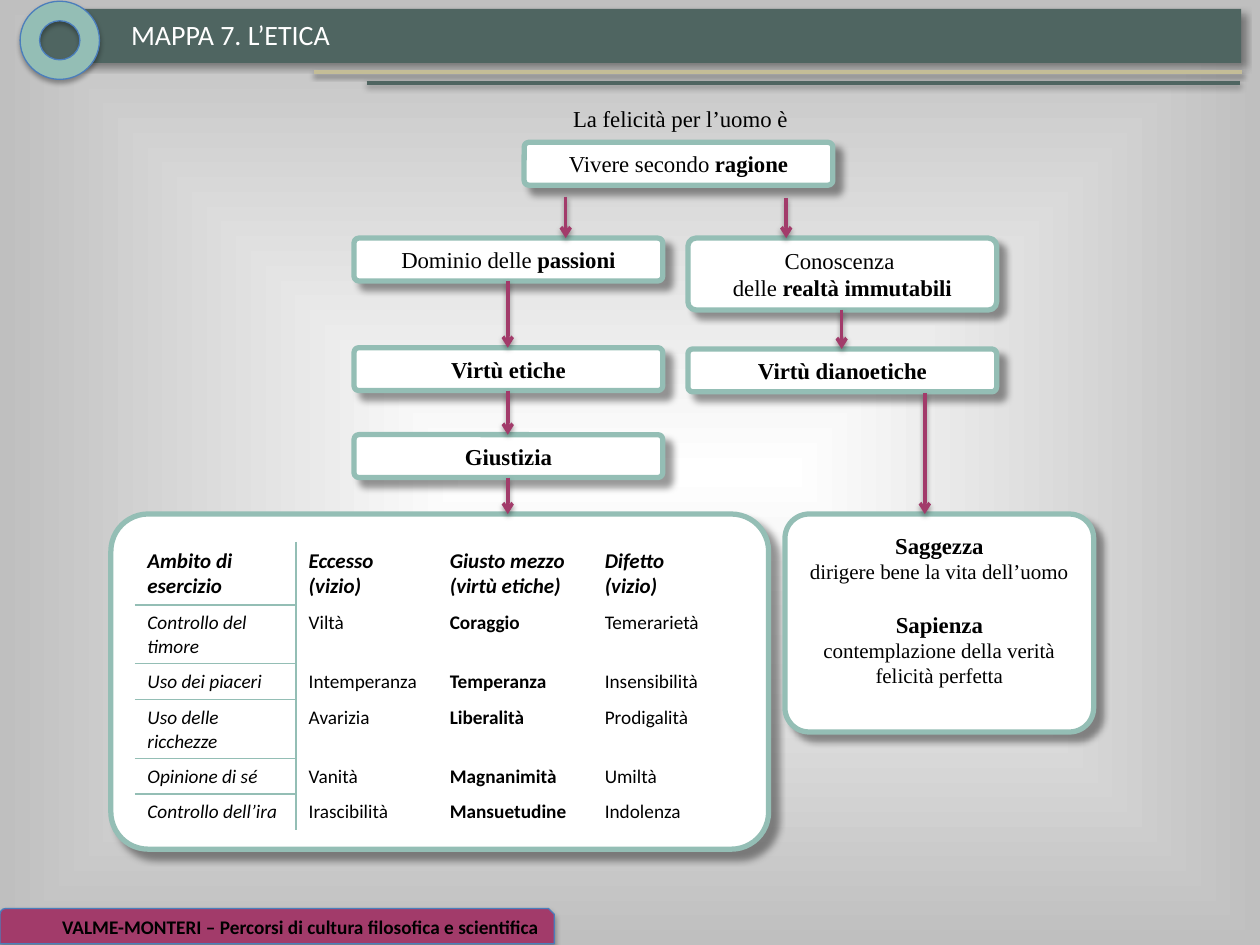
from dataclasses import dataclass

from pptx import Presentation
from pptx.dml.color import RGBColor
from pptx.enum.shapes import MSO_CONNECTOR, MSO_SHAPE
from pptx.enum.text import MSO_ANCHOR, MSO_AUTO_SIZE, PP_ALIGN
from pptx.oxml import parse_xml
from pptx.oxml.ns import nsdecls
from pptx.util import Inches, Pt

LEFT, MID, RIGHT = PP_ALIGN.LEFT, PP_ALIGN.CENTER, PP_ALIGN.RIGHT
TOP, CENTRE = MSO_ANCHOR.TOP, MSO_ANCHOR.MIDDLE
GROW, FIXED = MSO_AUTO_SIZE.SHAPE_TO_FIT_TEXT, MSO_AUTO_SIZE.NONE
RECT, ROUND = MSO_SHAPE.RECTANGLE, MSO_SHAPE.ROUNDED_RECTANGLE
SNIP, DONUT = MSO_SHAPE.SNIP_ROUND_RECTANGLE, MSO_SHAPE.DONUT
LINE = MSO_CONNECTOR.STRAIGHT


@dataclass(frozen=True)
class Theme:
    dark: str = "4F6561"
    mint: str = "94BEB5"
    plum: str = "A23B6A"
    sand: str = "C4BD97"
    blue: str = "4B7EBC"
    white: str = "FFFFFF"
    black: str = "000000"
    grey: str = "BFBFBF"
    sans: str = "Calibri"
    serif: str = "Times New Roman"
    head: int = 16
    body: int = 13
    note: int = 12
    small: int = 11


@dataclass(frozen=True)
class Shade:
    alpha: int
    blur: float
    dist: float
    angle: int


@dataclass(frozen=True)
class Box:
    x: float
    y: float
    h: float
    text: str
    w: float = 2.45


@dataclass(frozen=True)
class Arrow:
    x: float
    top: float
    end: float


T = Theme()
BAR, CARD = Shade(40, 4, 3, 45), Shade(40, 4, 6, 45)
SOFT, THIN = Shade(35, 3.1, 1.8, 90), Shade(38, 3.1, 1.6, 90)

# Text between ** marks is bold
BOXES = [
    Box(4.16, 1.13, 0.34, "Vivere secondo **ragione**"),
    Box(2.81, 1.89, 0.34, "Dominio delle **passioni**"),
    Box(5.46, 1.89, 0.57, "Conoscenza \ndelle **realtà immutabili**"),
    Box(2.81, 2.76, 0.34, "**Virtù etiche**"),
    Box(5.46, 2.77, 0.34, "**Virtù dianoetiche**"),
    Box(2.81, 3.45, 0.34, "**Giustizia**"),
]
GOALS = Box(6.23, 4.08, 1.73, "**Saggezza**\ndirigere bene la vita dell’uomo\n**Sapienza**\n"
            "contemplazione della verità\nfelicità perfetta")
PANEL = Box(0.88, 4.08, 2.66, "", 5.22)
ARROWS = [
    Arrow(4.03, 2.23, 2.76), Arrow(4.03, 3.1, 3.45), Arrow(4.03, 3.79, 4.08),
    Arrow(6.68, 2.46, 2.77), Arrow(7.34, 3.12, 4.08),
    Arrow(4.49, 1.56, 1.89), Arrow(6.24, 1.57, 1.89),
]
COLS = [1.28, 1.12, 1.23, 1.25]
ROWS = [0.44, 0.35, 0.27, 0.33, 0.27, 0.27]
CELLS = [
    ["Ambito di esercizio", "Eccesso \n(vizio)", "Giusto mezzo\n(virtù etiche)", "Difetto\n(vizio)"],
    ["Controllo del timore", "Viltà", "Coraggio", "Temerarietà"],
    ["Uso dei piaceri", "Intemperanza", "Temperanza", "Insensibilità"],
    ["Uso delle ricchezze", "Avarizia", "Liberalità", "Prodigalità"],
    ["Opinione di sé", "Vanità", "Magnanimità", "Umiltà"],
    ["Controllo dell’ira", "Irascibilità", "Mansuetudine", "Indolenza"],
]


def tint(code: str) -> RGBColor:
    return RGBColor.from_string(code)


def write(frame, text: str, *, size=T.body, font=T.serif, color=T.black, align=LEFT,
          anchor=TOP, bold=False, italic=False, wrap=True, fit=FIXED) -> None:
    frame.word_wrap, frame.auto_size, frame.vertical_anchor = wrap, fit, anchor
    for i, row in enumerate(text.split("\n")):
        para = frame.paragraphs[0] if i == 0 else frame.add_paragraph()
        para.alignment = align
        for j, part in enumerate(row.split("**")):
            if not part:
                continue
            run = para.add_run()
            run.text = part
            face = run.font
            face.size, face.name, face.italic = Pt(size), font, italic
            face.bold = bold or j % 2 == 1
            face.color.rgb = tint(color)


def shade(shape, look: Shade) -> None:
    shape.element.spPr.append(parse_xml(
        f'<a:effectLst {nsdecls("a")}><a:outerShdw blurRad="{Pt(look.blur)}" dist="{Pt(look.dist)}" '
        f'dir="{look.angle * 60000}" algn="tl" rotWithShape="0"><a:srgbClr val="{T.black}">'
        f'<a:alpha val="{look.alpha * 1000}"/></a:srgbClr></a:outerShdw></a:effectLst>'))


def block(slide, kind, x, y, w, h, fill: str, look: Shade, line=None, width=0.75):
    shape = slide.shapes.add_shape(kind, Inches(x), Inches(y), Inches(w), Inches(h))
    shape.fill.solid()
    shape.fill.fore_color.rgb = tint(fill)
    if line:
        shape.line.color.rgb, shape.line.width = tint(line), Pt(width)
    else:
        shape.line.fill.background()
    shade(shape, look)
    return shape


def card(slide, box: Box):
    shape = block(slide, ROUND, box.x, box.y, box.w, box.h, T.white, CARD, T.mint, 3)
    shape.adjustments[0] = 0.111
    if box.text:
        write(shape.text_frame, box.text, align=MID, anchor=CENTRE)
    return shape


def rule(slide, x, y, right, end, color: str, tip=False) -> None:
    line = slide.shapes.add_connector(LINE, Inches(x), Inches(y), Inches(right), Inches(end))
    line.line.color.rgb, line.line.width = tint(color), Pt(2)
    if tip:
        line.line._get_or_add_ln().append(parse_xml(f'<a:tailEnd {nsdecls("a")} type="arrow"/>'))
    shade(line, THIN)


def edge(cell, sides: str) -> None:
    props = cell._tc.get_or_add_tcPr()
    for i, side in enumerate("LRTB"):
        paint = (f'<a:solidFill><a:srgbClr val="{T.mint}"/></a:solidFill>'
                 if side in sides else "<a:noFill/>")
        props.insert(i, parse_xml(f'<a:ln{side} {nsdecls("a")} w="{Pt(1)}">{paint}</a:ln{side}>'))


def grid(slide) -> None:
    table = slide.shapes.add_table(len(ROWS), len(COLS), Inches(1.07), Inches(4.3),
                                   Inches(sum(COLS)), Inches(sum(ROWS))).table
    table.first_row = table.horz_banding = False
    for col, wide in zip(table.columns, COLS):
        col.width = Inches(wide)
    for r, (row, high) in enumerate(zip(CELLS, ROWS)):
        table.rows[r].height = Inches(high)
        for c, text in enumerate(row):
            cell = table.cell(r, c)
            cell.fill.solid()
            cell.fill.fore_color.rgb = tint(T.white)
            write(cell.text_frame, text, size=T.small if r else T.note, font=T.sans,
                  bold=r == 0 or c == 2, italic=r == 0 or c == 0)
            # Rules only around the first column's inner edges
            sides = "L" if c == 1 else ""
            if c == 0:
                sides = "R" + ("T" if r else "") + ("B" if r < len(ROWS) - 1 else "")
            edge(cell, sides)


def main() -> None:
    deck = Presentation()
    deck.slide_width, deck.slide_height = Inches(10), Inches(7.5)
    slide = deck.slides.add_slide(deck.slide_layouts[5])

    # Background
    slide.element.cSld.insert(0, parse_xml(
        f'<p:bg {nsdecls("p", "a")}><p:bgPr><a:gradFill rotWithShape="1"><a:gsLst>'
        f'<a:gs pos="0"><a:srgbClr val="{T.white}"/></a:gs>'
        f'<a:gs pos="100000"><a:srgbClr val="{T.grey}"/></a:gs></a:gsLst><a:path path="shape">'
        '<a:fillToRect l="50000" t="50000" r="50000" b="50000"/></a:path></a:gradFill>'
        '<a:effectLst/></p:bgPr></p:bg>'))

    # Header and footer
    bar = block(slide, RECT, 0.29, 0.07, 9.56, 0.43, T.dark, BAR)
    title = slide.shapes.title
    title.left, title.top, title.width, title.height = map(Inches, (0.94, 0.09, 1.83, 0.37))
    write(title.text_frame, "MAPPA 7. L’ETICA", size=T.head, font=T.sans, color=T.white, wrap=False)
    bar.element.addnext(title.element)
    foot = block(slide, SNIP, 0, 7.21, 4.4, 0.28, T.plum, SOFT, T.blue)
    write(foot.text_frame, "VALME-MONTERI – Percorsi di cultura filosofica e scientifica",
          size=T.small, font=T.sans, align=RIGHT, anchor=CENTRE, bold=True)
    rule(slide, 2.49, 0.57, 9.86, 0.57, T.sand)
    rule(slide, 2.91, 0.66, 9.84, 0.66, T.dark)
    block(slide, DONUT, 0.16, 0.01, 0.63, 0.62, T.mint, SOFT, T.blue)

    # Concept map
    lead = slide.shapes.add_textbox(Inches(4.45), Inches(0.78), Inches(1.92), Inches(0.32))
    write(lead.text_frame, "La felicità per l’uomo è", wrap=False, fit=GROW)
    card(slide, PANEL)
    for box in BOXES:
        card(slide, box)
    goals = card(slide, GOALS).text_frame
    goals.margin_bottom = Inches(0.26)
    goals.paragraphs[2].space_before = Pt(15)
    for i in (1, 3, 4):
        goals.paragraphs[i].runs[0].font.size = Pt(T.note)

    # Virtue table and arrows
    grid(slide)
    for arrow in ARROWS:
        rule(slide, arrow.x, arrow.top, arrow.x, arrow.end, T.plum, tip=True)

    deck.save("out.pptx")


if __name__ == "__main__":
    main()
